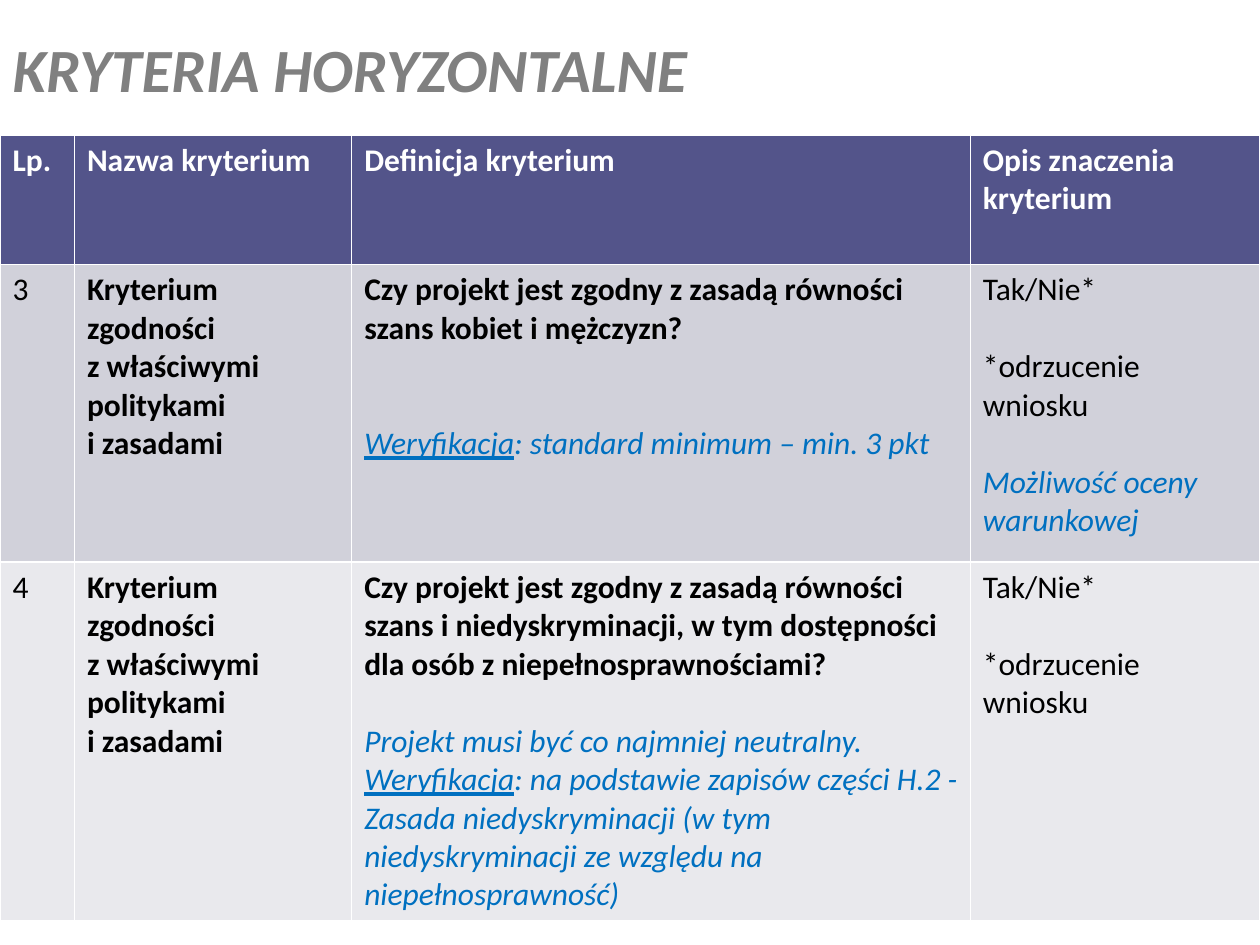
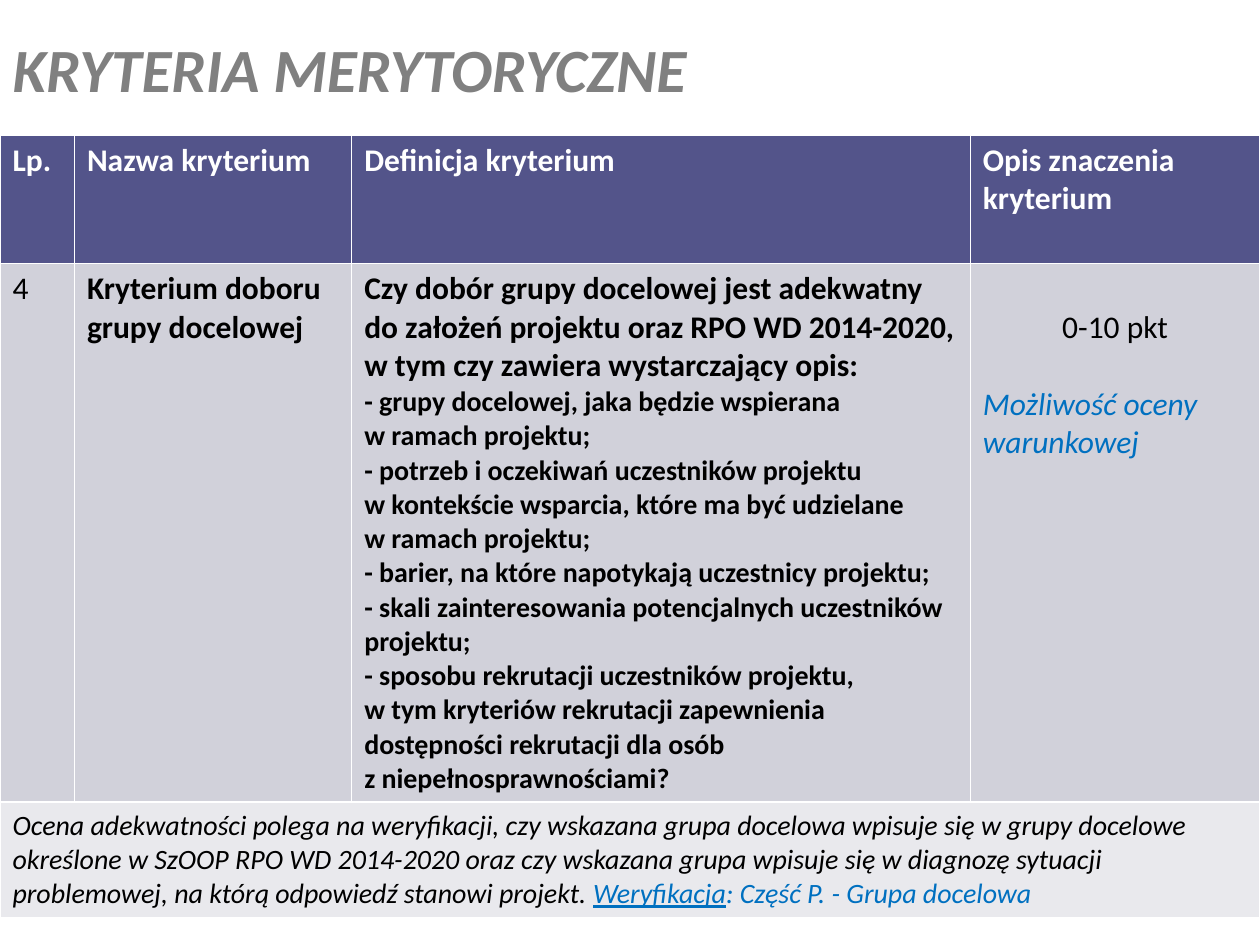
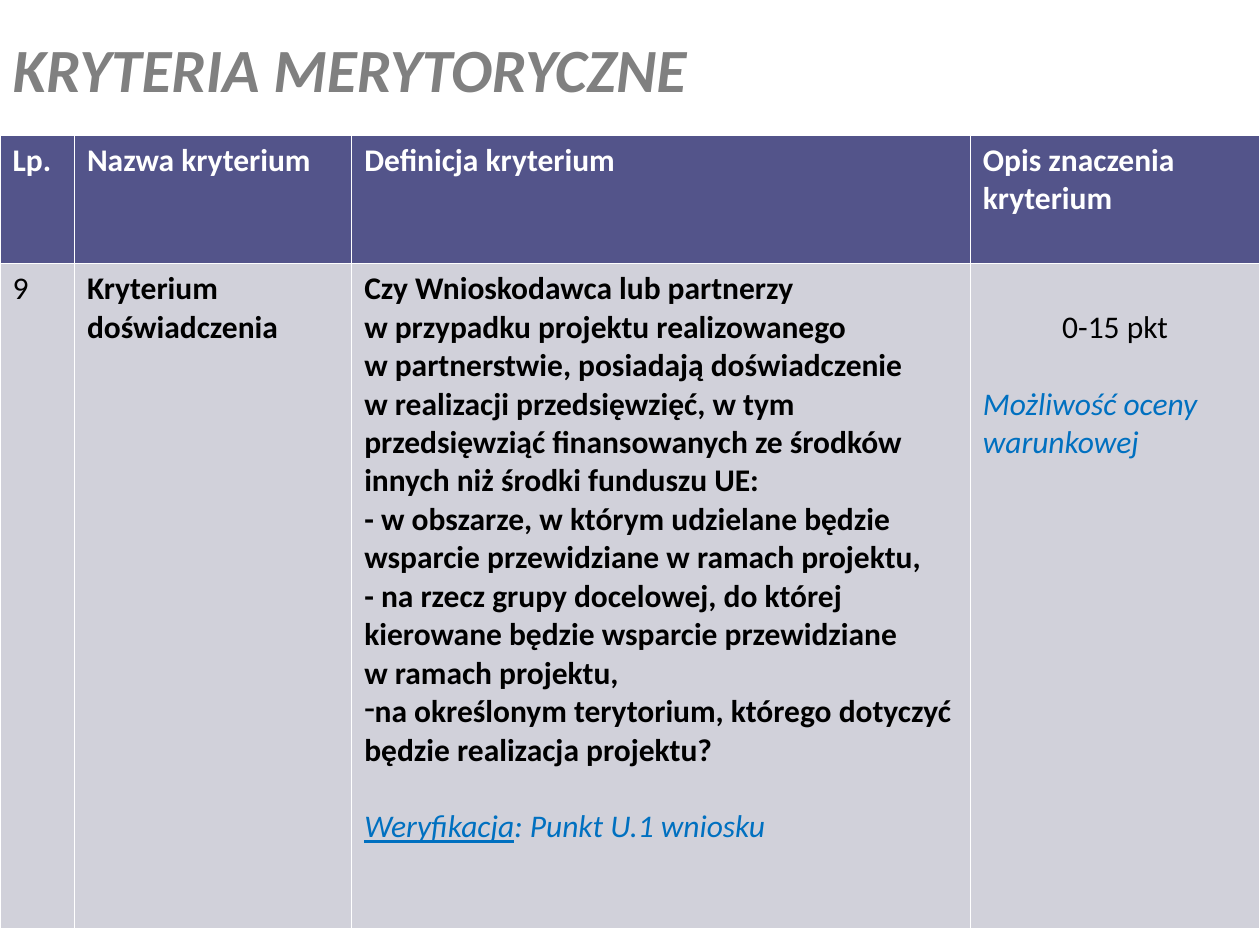
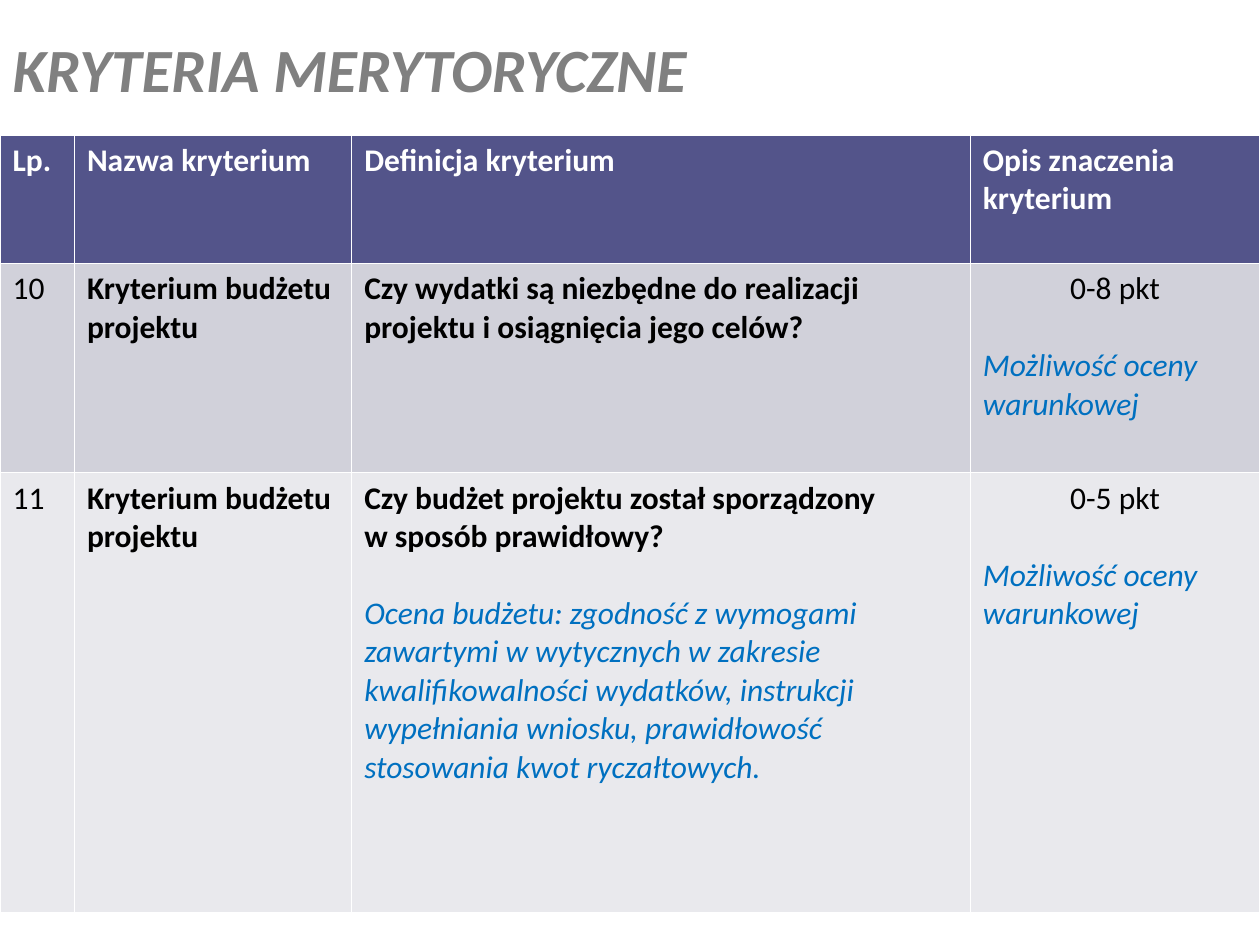
from lxml import etree
from pptx import Presentation
from pptx.dml.color import RGBColor
from pptx.enum.text import MSO_ANCHOR, PP_ALIGN
from pptx.oxml.ns import qn
from pptx.util import Cm, Pt

LEFT = PP_ALIGN.LEFT
CENTER = PP_ALIGN.CENTER
MIDDLE = MSO_ANCHOR.MIDDLE

FONT = "Calibri"
WHITE = "FFFFFF"
BLACK = "000000"
GREY = "808080"
BLUE = "0070C0"
HEADER_FILL = "53548A"
BAND_FILLS = ["D1D1DA", "E9E9ED"]

TITLE_ONLY = 5
TITLE_HEIGHT = 2.72
LINE = 22
CELL_MARGIN = 0.13
SKIPPED_LINE = 0.78
COLUMN_WIDTHS = [1.5, 5.59, 12.47, 5.84]
VERIFICATION = "Weryfikacja"

STYLES = {
    "header": dict(colour=WHITE, bold=True),
    "plain": dict(colour=BLACK),
    "score": dict(colour=BLACK, align=CENTER),
    "bold": dict(colour=BLACK, bold=True),
    "item": dict(colour=BLACK, bold=True, size=16),
    "dash": dict(colour=BLACK, bold=True, bullet="-"),
    "remark": dict(colour=BLACK, italic=True, size=16),
    "note": dict(colour=BLUE, italic=True),
}

HEADER = [
    [("header", text)]
    for text in ("Lp.", "Nazwa kryterium", "Definicja kryterium", "Opis znaczenia kryterium")
]
POLICIES = [("bold", "Kryterium zgodności\nz właściwymi politykami\ni zasadami")]
BUDGET = [("bold", "Kryterium budżetu projektu")]
REJECTION = [("plain", "Tak/Nie*"), ("plain", "*odrzucenie wniosku", 1)]
CONDITIONAL = ("note", "Możliwość oceny warunkowej", 1)

SLIDES = [
    {
        "title": "KRYTERIA HORYZONTALNE",
        "heights": [2.61, 6.0, 7.11],
        "rows": [
            [
                [("plain", "3")],
                POLICIES,
                [
                    ("bold", "Czy projekt jest zgodny z zasadą równości szans kobiet i mężczyzn?"),
                    ("note", "Weryfikacja: standard minimum – min. 3 pkt", 2),
                ],
                REJECTION + [CONDITIONAL],
            ],
            [
                [("plain", "4")],
                POLICIES,
                [
                    ("bold", "Czy projekt jest zgodny z zasadą równości szans i niedyskryminacji, "
                             "w tym dostępności dla osób z niepełnosprawnościami?"),
                    ("note", "Projekt musi być co najmniej neutralny.", 1),
                    ("note", "Weryfikacja: na podstawie zapisów części H.2 - Zasada niedyskryminacji "
                             "(w tym niedyskryminacji ze względu na niepełnosprawność)"),
                ],
                REJECTION,
            ],
        ],
    },
    {
        "title": "KRYTERIA MERYTORYCZNE",
        "heights": [2.59, 10.8, 2.31],
        "score_drop": SKIPPED_LINE,
        "rows": [
            [
                [("plain", "4")],
                [("bold", "Kryterium doboru grupy docelowej")],
                [
                    ("bold", "Czy dobór grupy docelowej jest adekwatny do założeń projektu oraz "
                             "RPO WD 2014-2020, w tym czy zawiera wystarczający opis:"),
                    ("item", "- grupy docelowej, jaka będzie wspierana\nw ramach projektu;"),
                    ("item", "- potrzeb i oczekiwań uczestników projektu\nw kontekście wsparcia, "
                             "które ma być udzielane\nw ramach projektu;"),
                    ("item", "- barier, na które napotykają uczestnicy projektu;"),
                    ("item", "- skali zainteresowania potencjalnych uczestników projektu;"),
                    ("item", "- sposobu rekrutacji uczestników projektu,\nw tym kryteriów rekrutacji "
                             "zapewnienia dostępności rekrutacji dla osób\nz niepełnosprawnościami?"),
                ],
                [("score", "0-10 pkt"), CONDITIONAL],
            ],
            [
                [
                    ("remark", "Ocena adekwatności polega na weryfikacji, czy wskazana grupa docelowa "
                               "wpisuje się w grupy docelowe określone w SzOOP RPO WD 2014-2020 oraz czy "
                               "wskazana grupa wpisuje się w diagnozę sytuacji problemowej, na którą "
                               "odpowiedź stanowi projekt. Weryfikacja: Część P. - Grupa docelowa"),
                ],
            ],
        ],
    },
    {
        "title": "KRYTERIA MERYTORYCZNE",
        "heights": [2.59, 13.41],
        "score_drop": SKIPPED_LINE,
        "rows": [
            [
                [("plain", "9")],
                [("bold", "Kryterium doświadczenia")],
                [
                    ("bold", "Czy Wnioskodawca lub partnerzy\nw przypadku projektu realizowanego\n"
                             "w partnerstwie, posiadają doświadczenie\nw realizacji przedsięwzięć, w tym "
                             "przedsięwziąć finansowanych ze środków innych niż środki funduszu UE:"),
                    ("bold", "- w obszarze, w którym udzielane będzie wsparcie przewidziane "
                             "w ramach projektu,"),
                    ("bold", "- na rzecz grupy docelowej, do której kierowane będzie wsparcie "
                             "przewidziane\nw ramach projektu,"),
                    ("dash", "na określonym terytorium, którego dotyczyć będzie realizacja projektu?"),
                    ("note", "Weryfikacja: Punkt U.1 wniosku", 1),
                ],
                [("score", "0-15 pkt"), CONDITIONAL],
            ],
        ],
    },
    {
        "title": "KRYTERIA MERYTORYCZNE",
        "heights": [2.59, 4.22, 8.86],
        "rows": [
            [
                [("plain", "10")],
                BUDGET,
                [("bold", "Czy wydatki są niezbędne do realizacji projektu i osiągnięcia jego celów?")],
                [("score", "0-8 pkt"), CONDITIONAL],
            ],
            [
                [("plain", "11")],
                BUDGET,
                [
                    ("bold", "Czy budżet projektu został sporządzony\nw sposób prawidłowy?"),
                    ("note", "Ocena budżetu: zgodność z wymogami zawartymi w wytycznych w zakresie "
                             "kwalifikowalności wydatków, instrukcji wypełniania wniosku, prawidłowość "
                             "stosowania kwot ryczałtowych.", 1),
                ],
                [("score", "0-5 pkt"), CONDITIONAL],
            ],
        ],
    },
]


def colour(value):
    return RGBColor.from_string(value)


def set_font(font, size, value, bold=False, italic=False):
    font.name = FONT
    font.size = Pt(size)
    font.bold = bold
    font.italic = italic
    font.color.rgb = colour(value)


def add_text(paragraph, text, value=None, underline=None):
    for index, line in enumerate(text.split("\n")):
        if index:
            paragraph.add_line_break()
        if line:
            run = paragraph.add_run()
            run.text = line
            if value:
                run.font.color.rgb = colour(value)
            if underline:
                run.font.underline = True


def write_paragraph(paragraph, style_name, text, skipped_lines=0):
    style = STYLES[style_name]
    paragraph.alignment = style.get("align", LEFT)
    if skipped_lines:
        paragraph.space_before = Pt(skipped_lines * LINE)
    if "bullet" in style:
        properties = paragraph._p.get_or_add_pPr()
        properties.set("marL", "0")
        properties.set("indent", "0")
        etree.SubElement(properties, qn("a:buChar")).set("char", style["bullet"])
    set_font(paragraph.font, style.get("size", 18), style["colour"],
             style.get("bold", False), style.get("italic", False))
    before, verification, after = text.partition(VERIFICATION)
    add_text(paragraph, before)
    add_text(paragraph, verification, BLUE, True)
    add_text(paragraph, after, BLUE if verification else None)


def write_cell(cell, paragraphs):
    frame = cell.text_frame
    for index, content in enumerate(paragraphs):
        paragraph = frame.add_paragraph() if index else frame.paragraphs[0]
        write_paragraph(paragraph, *content)


def add_title(slide, text):
    title = slide.shapes.title
    title.left, title.top, title.width, title.height = Cm(0), Cm(0), Cm(24.13), Cm(TITLE_HEIGHT)
    frame = title.text_frame
    frame.vertical_anchor = MIDDLE
    frame.word_wrap = True
    paragraph = frame.paragraphs[0]
    paragraph.alignment = LEFT
    set_font(paragraph.font, 35.1, GREY, True, True)
    add_text(paragraph, text)


def add_criteria(slide, rows, heights, score_drop=0):
    column_count = len(COLUMN_WIDTHS)
    table = slide.shapes.add_table(
        len(heights), column_count, Cm(0), Cm(TITLE_HEIGHT),
        Cm(sum(COLUMN_WIDTHS)), Cm(sum(heights)),
    ).table
    for column, width in zip(table.columns, COLUMN_WIDTHS):
        column.width = Cm(width)
    fills = [HEADER_FILL] + BAND_FILLS
    for index, (contents, height, fill) in enumerate(zip([HEADER] + rows, heights, fills)):
        row = table.rows[index]
        row.height = Cm(height)
        for cell in row.cells:
            cell.fill.solid()
            cell.fill.fore_color.rgb = colour(fill)
        if len(contents) == 1:
            row.cells[0].merge(row.cells[column_count - 1])
        for cell, paragraphs in zip(row.cells, contents):
            write_cell(cell, paragraphs)
            if paragraphs[0][0] == "score":
                cell.margin_top = Cm(CELL_MARGIN + score_drop)


def main():
    presentation = Presentation()
    presentation.slide_width = Cm(25.4)
    presentation.slide_height = Cm(19.05)
    for content in SLIDES:
        slide = presentation.slides.add_slide(presentation.slide_layouts[TITLE_ONLY])
        add_title(slide, content["title"])
        add_criteria(slide, content["rows"], content["heights"], content.get("score_drop", 0))
    presentation.save("out.pptx")


if __name__ == "__main__":
    main()
